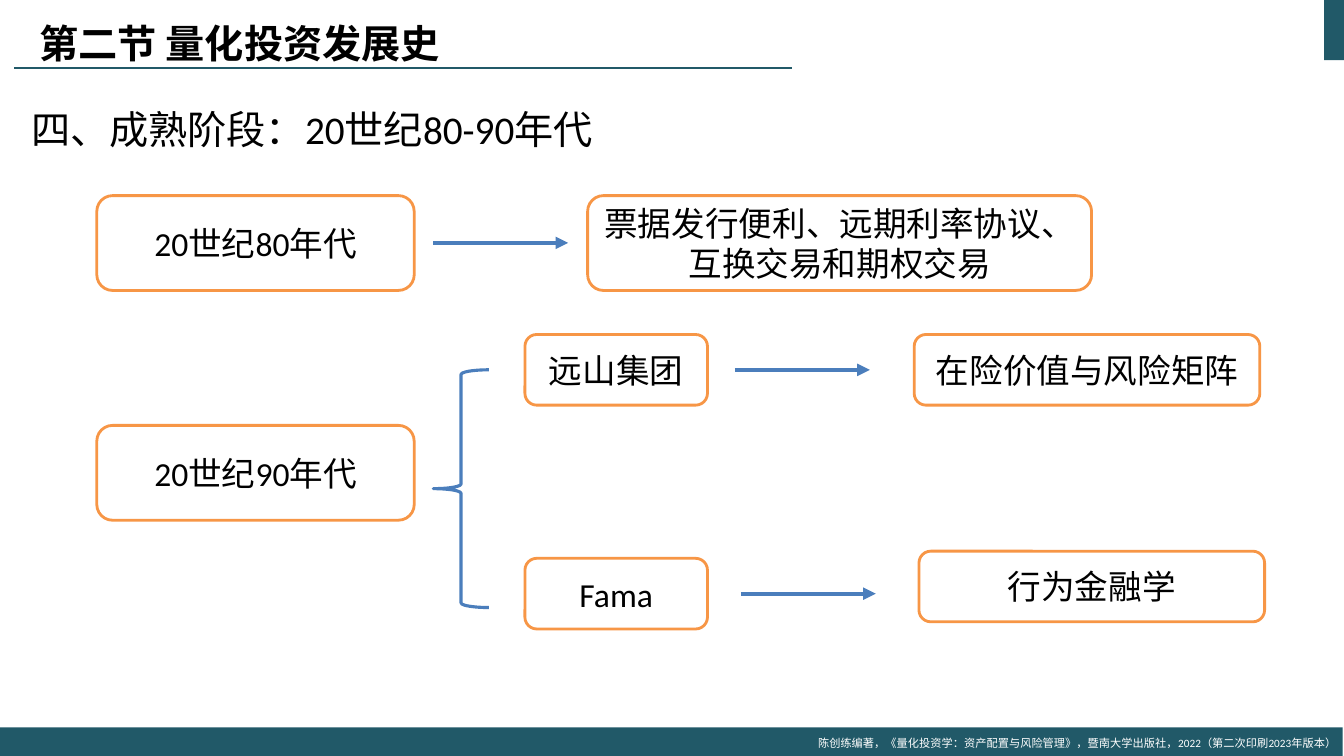
from pptx import Presentation
from pptx import util as u
from pptx.dml.color import RGBColor
from pptx.enum import shapes, text
from pptx.oxml.ns import qn
from lxml import etree

TEAL = RGBColor(0x21, 0x59, 0x68)
ORANGE = RGBColor(0xF7, 0x96, 0x46)
BLUE = RGBColor(0x4B, 0x7E, 0xBC)
BLACK = RGBColor(0, 0, 0)
WHITE = RGBColor(255, 255, 255)
LATIN = "Calibri"
HAN = "Noto Sans CJK SC"
LEFT, MID, RIGHT = text.PP_ALIGN.LEFT, text.PP_ALIGN.CENTER, text.PP_ALIGN.RIGHT


def write(frame, words, size=24, color=BLACK, bold=False, font=LATIN,
          align=MID, anchor=text.MSO_ANCHOR.MIDDLE, spacing=1.0, plain=False):
    frame.word_wrap = True
    frame.auto_size = text.MSO_AUTO_SIZE.NONE
    frame.vertical_anchor = anchor
    para = frame.paragraphs[0]
    para.alignment = align
    para.line_spacing = spacing
    para.space_before = u.Pt(0)
    if plain:
        props = para._p.get_or_add_pPr()
        props.set("marL", "0")
        props.set("indent", "0")
        etree.SubElement(props, qn("a:buNone"))
    run = para.add_run()
    run.text = words
    run.font.size = u.Pt(size)
    run.font.bold = bold
    run.font.color.rgb = color
    run.font.name = font
    etree.SubElement(run._r.get_or_add_rPr(), qn("a:ea")).set("typeface", HAN)


class Board:
    def __init__(self, slide, edge=2):
        self.slide = slide
        self.items = slide.shapes
        self.edge = edge

    def shape(self, kind, area, fill=None, line=None, width=0):
        item = self.items.add_shape(kind, *map(u.Cm, area))
        item.shadow.inherit = False
        if fill is None:
            item.fill.background()
        else:
            item.fill.solid()
            item.fill.fore_color.rgb = fill
        if line is None:
            item.line.fill.background()
        else:
            item.line.color.rgb = line
            item.line.width = u.Pt(width)
        return item

    def bar(self, *area):
        self.shape(shapes.MSO_SHAPE.RECTANGLE, area, fill=TEAL)

    def box(self, words, *area):
        item = self.shape(shapes.MSO_SHAPE.ROUNDED_RECTANGLE, area,
                          fill=WHITE, line=ORANGE, width=self.edge)
        write(item.text_frame, words)

    def brace(self, *area):
        self.shape(shapes.MSO_SHAPE.LEFT_BRACE, area, line=BLUE, width=2.25)

    def line(self, x, y, length, color, width, head=False):
        item = self.items.add_connector(
            shapes.MSO_CONNECTOR.STRAIGHT,
            u.Cm(x), u.Cm(y), u.Cm(x + length), u.Cm(y))
        item.line.color.rgb = color
        item.line.width = u.Pt(width)
        if head:
            stroke = item.line._get_or_add_ln()
            etree.SubElement(stroke, qn("a:tailEnd")).set("type", "triangle")
        etree.SubElement(item._element.spPr, qn("a:effectLst"))

    def arrow(self, x, y):
        self.line(x, y, 3.4, BLUE, 3, head=True)

    def note(self, words, *area, **style):
        write(self.items.add_textbox(*map(u.Cm, area)).text_frame, words, **style)

    def holder(self, index, words, *area, **style):
        item = self.slide.placeholders[index]
        item.left, item.top, item.width, item.height = map(u.Cm, area)
        write(item.text_frame, words, **style)


def main():
    deck = Presentation()
    deck.slide_width, deck.slide_height = u.Cm(33.87), u.Cm(19.05)
    board = Board(deck.slides.add_slide(deck.slide_layouts[1]))

    board.bar(33.37, 0, 0.5, 1.52)
    board.line(0.36, 1.72, 19.6, TEAL, 1.5)
    board.bar(0, 18.33, 33.84, 0.72)
    board.note("陈创练编著，《量化投资学：资产配置与风险管理》，暨南大学出版社，2022（第二次印刷2023年版本）",
               20.24, 18.43, 13.69, 0.61, size=8, color=WHITE, align=RIGHT)
    board.holder(0, "第二节 量化投资发展史", 0.74, 0, 27.64, 2.16,
                 size=28, bold=True, font=HAN, align=LEFT)
    board.holder(1, "四、成熟阶段：20世纪80-90年代", 0.53, 1.93, 32.79, 13.67,
                 size=28, align=LEFT, anchor=text.MSO_ANCHOR.TOP,
                 spacing=1.5, plain=True)

    for words, top in (("20世纪80年代", 4.93), ("20世纪90年代", 10.72)):
        board.box(words, 2.44, top, 8, 2.39)
    board.arrow(10.92, 6.12)
    board.box("票据发行便利、远期利率协议、互换交易和期权交易", 14.81, 4.93, 12.7, 2.39)

    board.brace(10.92, 9.32, 1.4, 5.99)
    rows = (
        ("远山集团", 8.43, 18.52, "在险价值与风险矩阵", 23.04, 8.43),
        ("Fama", 14.07, 18.67, "行为金融学", 23.16, 13.89),
    )
    for source, top, start, result, left, high in rows:
        board.box(source, 13.23, top, 4.6, 1.78)
        board.arrow(start, top + 0.89)
        board.box(result, left, high, 8.71, 1.78)

    deck.save("out.pptx")


if __name__ == "__main__":
    main()
